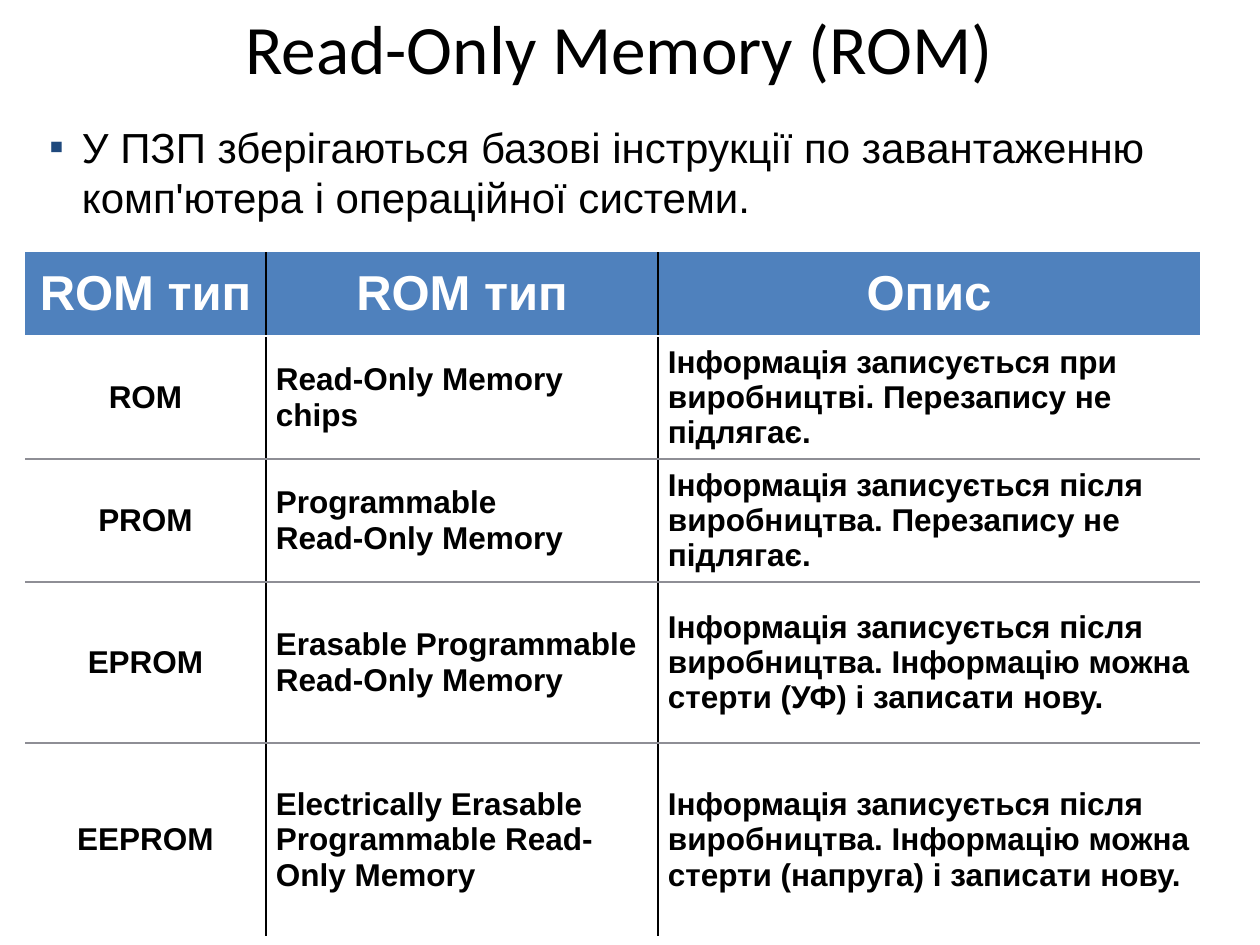
from dataclasses import dataclass

from lxml import etree
from pptx import Presentation
from pptx import util as u
from pptx.dml.color import RGBColor
from pptx.enum import text
from pptx.oxml import ns

SCALE = 914400 / 126


def px(n):
    return u.Emu(round(n * SCALE))


@dataclass(frozen=True)
class Theme:
    ink: str = "000000"
    paper: str = "FFFFFF"
    head: str = "4F81BD"
    rule: str = "8E8E95"
    mark: str = "1F497D"
    face: str = "Arial"
    display: str = "Calibri"
    title: float = 39.6
    body: int = 24
    label: int = 28
    cell: int = 18


def node(parent, tag, **attrs):
    return etree.SubElement(parent, ns.qn(f"a:{tag}"), attrs)


class Deck:
    def __init__(self, theme):
        self.theme = theme
        self.show = Presentation()
        self.show.slide_width, self.show.slide_height = px(1260), px(945)
        self.slide = self.show.slides.add_slide(self.show.slide_layouts[1])

    def words(self, para, copy, size, color, face=None, bold=False):
        """Add copy as runs, with a line break at each newline."""
        for i, part in enumerate(copy.split("\n")):
            if i:
                para.add_line_break()
            run = para.add_run()
            run.text = part
            font = run.font
            font.name, font.size, font.bold = face or self.theme.face, u.Pt(size), bold
            font.color.rgb = RGBColor.from_string(color)

    def place(self, shape, box, anchor):
        """Move a placeholder and return its first paragraph."""
        shape.left, shape.top, shape.width, shape.height = map(px, box)
        frame = shape.text_frame
        frame.word_wrap = True
        frame.auto_size = text.MSO_AUTO_SIZE.NONE
        frame.vertical_anchor = anchor
        frame.margin_left = frame.margin_right = px(12)
        frame.margin_top = frame.margin_bottom = px(6)
        return frame.paragraphs[0]

    def title(self, copy, box):
        t = self.theme
        para = self.place(self.slide.shapes.title, box, text.MSO_ANCHOR.BOTTOM)
        para.alignment = text.PP_ALIGN.CENTER
        self.words(para, copy, t.title, t.ink, t.display)

    def bullet(self, copy, box):
        t = self.theme
        para = self.place(self.slide.placeholders[1], box, text.MSO_ANCHOR.TOP)
        para.alignment = text.PP_ALIGN.LEFT
        para.space_before = u.Pt(t.body / 2)
        props = para._p.get_or_add_pPr()
        props.set("marL", str(px(33)))
        props.set("indent", str(-px(33)))
        node(node(props, "buClr"), "srgbClr", val=t.mark)
        node(props, "buFont", typeface=t.face)
        node(props, "buChar", char="▪")
        self.words(para, copy, t.body, t.ink)

    def edge(self, cell, side, color, width):
        line = node(cell._tc.get_or_add_tcPr(), f"ln{side}", w=str(u.Pt(width)))
        if color:
            node(node(line, "solidFill"), "srgbClr", val=color)
        else:
            node(line, "noFill")

    def table(self, rows, spot, cols, heights):
        shape = self.slide.shapes.add_table(
            len(rows), len(cols), *map(px, (*spot, sum(cols), sum(heights))))
        grid = shape.table
        grid.horz_banding = False
        for col, width in zip(grid.columns, cols):
            col.width = px(width)
        for row, height in zip(grid.rows, heights):
            row.height = px(height)
        for r, row in enumerate(rows):
            for c, copy in enumerate(row):
                self.cell(grid, r, c, copy)

    def cell(self, grid, r, c, copy):
        t = self.theme
        cell = grid.cell(r, c)
        head, last = r == 0, len(grid.rows) - 1
        rules = [(None, 1), (t.paper, 1.5)] + [(t.rule, 1)] * (last - 1) + [(t.paper, 1)]
        self.edge(cell, "L", t.ink if c else None, 1)
        self.edge(cell, "R", t.ink if c < len(grid.columns) - 1 else None, 1)
        self.edge(cell, "T", *rules[r])
        self.edge(cell, "B", *rules[r + 1])
        cell.fill.solid()
        cell.fill.fore_color.rgb = RGBColor.from_string(t.head if head else t.paper)
        cell.vertical_anchor = text.MSO_ANCHOR.MIDDLE
        cell.margin_left = cell.margin_right = px(10)
        cell.margin_top = cell.margin_bottom = px(5)
        para = cell.text_frame.paragraphs[0]
        mid = head or c == 0
        para.alignment = text.PP_ALIGN.CENTER if mid else text.PP_ALIGN.LEFT
        size = t.label if head else t.cell
        para.space_before = u.Pt(size / 5)
        self.words(para, copy, size, t.paper if head else t.ink, bold=True)


ROWS = [
    ("ROM тип", "ROM тип", "Опис"),
    ("ROM", "Read-Only Memory chips",
     "Інформація записується при виробництві. Перезапису не підлягає."),
    ("PROM", "Programmable \nRead-Only Memory",
     "Інформація записується після виробництва. Перезапису не підлягає."),
    ("EPROM", "Erasable Programmable Read-Only Memory",
     "Інформація записується після виробництва. "
     "Інформацію можна стерти (УФ) і записати нову."),
    ("EEPROM", "Electrically Erasable Programmable Read-Only Memory",
     "Інформація записується після виробництва. "
     "Інформацію можна стерти (напруга) і записати нову."),
]


def main():
    deck = Deck(Theme())
    deck.title("Read-Only Memory (ROM)", (45, 0, 1149, 94))
    deck.table(ROWS, (25, 252), (241, 392, 542), (84, 123, 123, 161, 194))
    deck.bullet("У ПЗП зберігаються базові інструкції по завантаженню "
                "комп'ютера і операційної системи.", (37, 115, 1193, 113))
    deck.show.save("out.pptx")


if __name__ == "__main__":
    main()
